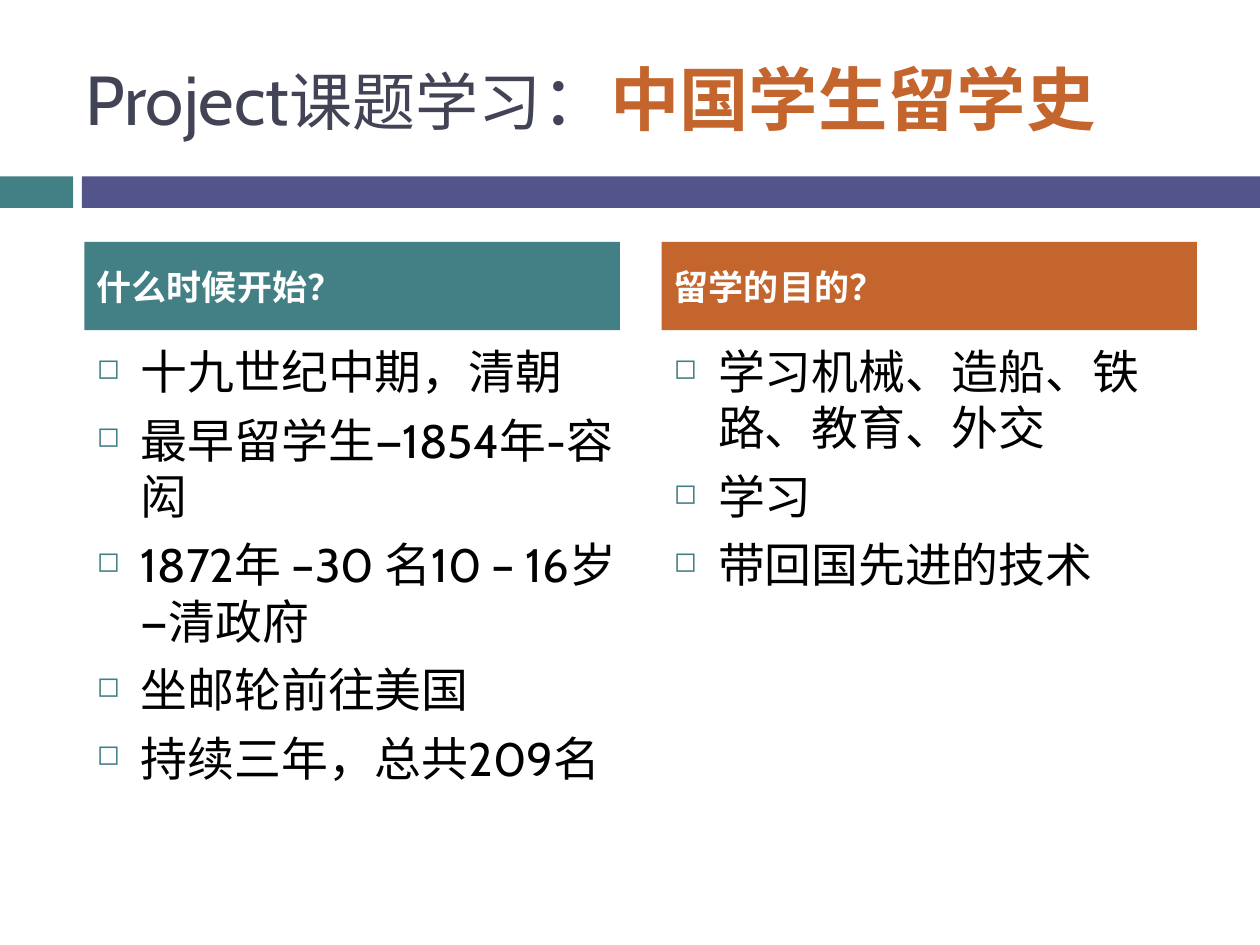
from lxml.etree import SubElement
from pptx import Presentation
from pptx.dml.color import RGBColor
from pptx.enum.lang import MSO_LANGUAGE_ID as Language
from pptx.enum.shapes import MSO_SHAPE as Shape
from pptx.enum.text import MSO_ANCHOR as Anchor, PP_ALIGN as Align
from pptx.oxml.ns import qn
from pptx.util import Inches, Pt

TEAL = RGBColor(0x43, 0x80, 0x86)
PURPLE = RGBColor(0x53, 0x54, 0x8A)
ORANGE = RGBColor(0xC4, 0x65, 0x2D)
SLATE = RGBColor(0x42, 0x44, 0x56)
BLACK = RGBColor(0, 0, 0)
WHITE = RGBColor(255, 255, 255)


class SlideBuilder:
    font_name = "Cabin"
    heading_size = 20
    body_size = 26.8
    space_before = 7
    bullet_indent = 0.35

    def __init__(self, slide):
        self.slide = slide

    def run(self, paragraph, text, size, color, bold=False):
        run = paragraph.add_run()
        run.text = text
        font = run.font
        font.name = self.font_name
        font.size = Pt(size)
        font.bold = bold
        font.color.rgb = color
        font.language_id = Language.SIMPLIFIED_CHINESE
        SubElement(font._element, qn("a:ea"), typeface=self.font_name)

    def bar(self, left, top, width, height, color):
        shape = self.slide.shapes.add_shape(
            Shape.RECTANGLE, Inches(left), Inches(top), Inches(width), Inches(height))
        shape.shadow.inherit = False
        shape.fill.solid()
        shape.fill.fore_color.rgb = color
        shape.line.fill.background()
        return shape

    def text_frame(self, left, top, width, height, anchor=Anchor.TOP):
        box = self.slide.shapes.add_textbox(
            Inches(left), Inches(top), Inches(width), Inches(height))
        frame = box.text_frame
        frame.word_wrap = True
        frame.vertical_anchor = anchor
        return frame

    def title(self, left, top, width, height, parts):
        frame = self.text_frame(left, top, width, height, Anchor.MIDDLE)
        for text, size, color, bold in parts:
            self.run(frame.paragraphs[0], text, size, color, bold)

    def heading(self, left, top, width, height, text, color):
        frame = self.bar(left, top, width, height, color).text_frame
        frame.word_wrap = True
        frame.vertical_anchor = Anchor.MIDDLE
        paragraph = frame.paragraphs[0]
        paragraph.alignment = Align.LEFT
        paragraph.space_before = Pt(self.space_before)
        self.run(paragraph, text, self.heading_size, WHITE, bold=True)

    def bullets(self, left, top, width, height, items):
        frame = self.text_frame(left, top, width, height)
        for index, item in enumerate(items):
            paragraph = frame.add_paragraph() if index else frame.paragraphs[0]
            paragraph.space_before = Pt(self.space_before)
            self.bullet(paragraph)
            self.run(paragraph, item, self.body_size, BLACK)

    def bullet(self, paragraph):
        properties = paragraph._p.get_or_add_pPr()
        indent = Inches(self.bullet_indent)
        properties.set("marL", str(indent))
        properties.set("indent", str(-indent))
        color = SubElement(properties, qn("a:buClr"))
        SubElement(color, qn("a:srgbClr"), val=str(TEAL))
        SubElement(properties, qn("a:buSzPct"), val="60000")
        SubElement(properties, qn("a:buChar"), char="◻")


def main():
    presentation = Presentation()
    presentation.slide_width = Inches(10)
    presentation.slide_height = Inches(7.5)
    builder = SlideBuilder(presentation.slides.add_slide(presentation.slide_layouts[6]))

    builder.bar(0, 1.4, 0.58, 0.25, TEAL)
    builder.bar(0.65, 1.4, 9.35, 0.25, PURPLE)
    builder.title(0.58, 0.3, 8.92, 0.95, [
        ("Project", 39.6, SLATE, False),
        ("课题学习", 36, SLATE, False),
        ("：", 39.6, SLATE, False),
        ("中国学生留学史", 39.6, ORANGE, True),
    ])

    columns = [
        (0.67, 4.42, TEAL, "什么时候开始？", [
            "十九世纪中期，清朝",
            "最早留学生—1854年-容闳",
            "1872年 –30 名10 – 16岁—清政府",
            "坐邮轮前往美国",
            "持续三年，总共209名",
        ]),
        (5.25, 4.25, ORANGE, "留学的目的？", [
            "学习机械、造船、铁路、教育、外交",
            "学习",
            "带回国先进的技术",
        ]),
    ]
    for left, body_width, color, heading, items in columns:
        builder.bullets(left, 2.67, body_width, 3.92, items)
        builder.heading(left, 1.92, 4.25, 0.7, heading, color)

    presentation.save("out.pptx")


if __name__ == "__main__":
    main()
